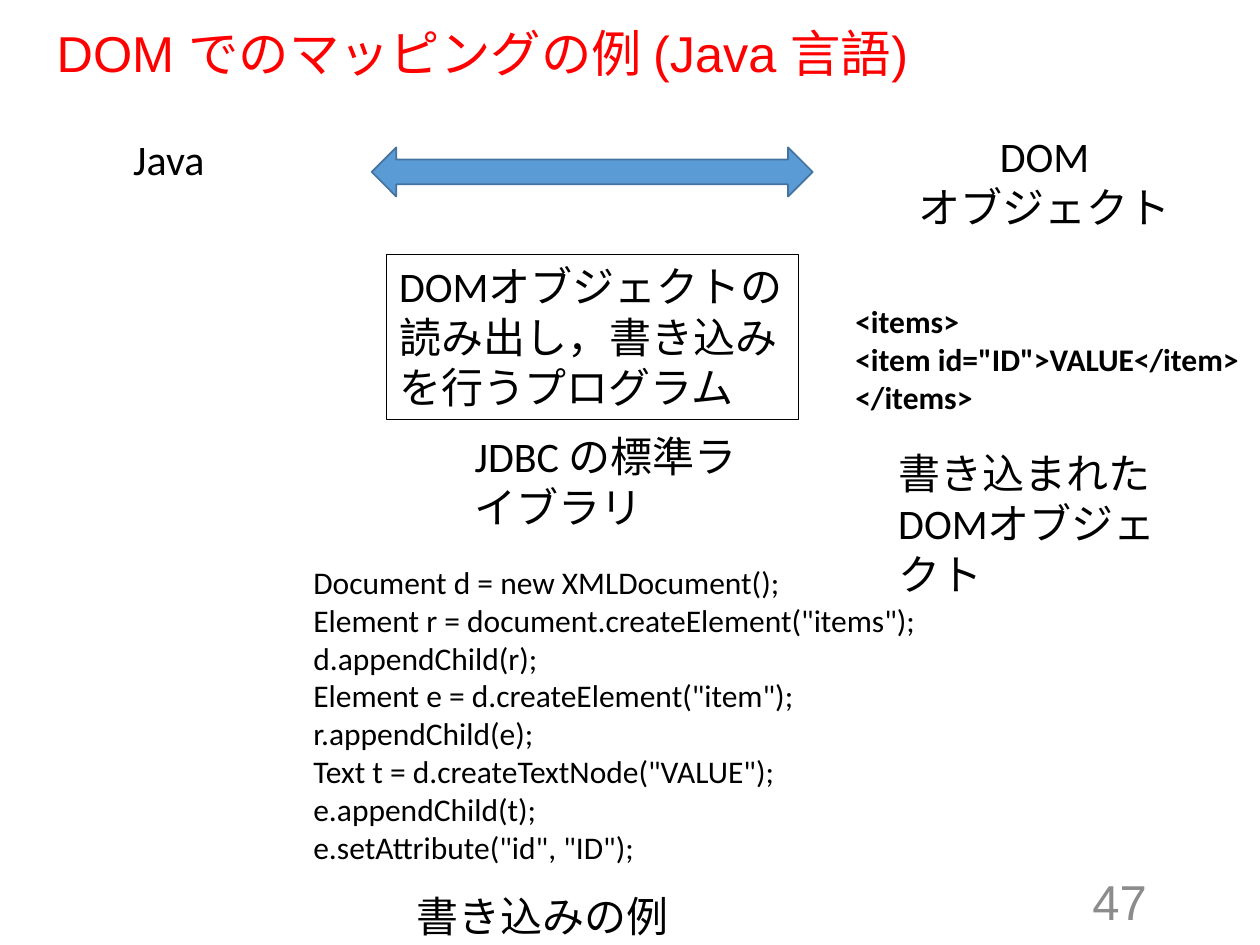
"""Build the slide on mapping between Java and DOM objects."""
from dataclasses import dataclass

from pptx import Presentation
from pptx.dml.color import RGBColor
from pptx.enum.shapes import MSO_SHAPE as Shape
from pptx.enum.text import MSO_ANCHOR as Anchor, MSO_AUTO_SIZE as AutoSize, PP_ALIGN as Align
from pptx.util import Pt


@dataclass(frozen=True)
class Label:
    """A text box: its place in points, its lines and its format."""
    left: float
    top: float
    width: float
    height: float
    lines: tuple[str, ...]
    size: float = 24
    bold: bool = False
    align: Align = Align.LEFT
    anchor: Anchor = Anchor.TOP
    font: str = "Calibri"
    color: str = "000000"
    border: str | None = None


CODE = (
    "Document d = new XMLDocument();",
    'Element r = document.createElement("items");',
    "d.appendChild(r);",
    'Element e = d.createElement("item");',
    "r.appendChild(e);",
    'Text t = d.createTextNode("VALUE");',
    "e.appendChild(t);",
    'e.setAttribute("id", "ID");',
)
MARKUP = ("<items>", '<item id="ID">VALUE</item>', "</items>")

LABELS = (
    Label(500.4, 500.4, 162, 28.8, ("47",), size=28, align=Align.RIGHT,
          anchor=Anchor.MIDDLE, font="Arial", color="8C8C8C"),
    Label(264.2, 242.6, 175, 65.5, ("JDBC の標準ライブラリ",)),
    Label(221, 145.4, 235.4, 94.3,
          ("DOMオブジェクトの読み出し，書き込みを行うプログラム",), border="000000"),
    Label(5.8, 72.7, 181.4, 36, ("Java",), align=Align.CENTER),
    Label(172, 318.2, 360, 181.4, CODE, size=18),
    Label(506.2, 71.3, 181.4, 65.5, ("DOM", "オブジェクト"), align=Align.CENTER),
    Label(481.7, 169.2, 241.9, 72.7, MARKUP, size=18, bold=True),
    Label(231.1, 505.4, 175, 36, ("書き込みの例",)),
    Label(506.2, 252, 175, 94.3, ("書き込まれたDOMオブジェクト",)),
)


def rgb(color: str) -> RGBColor:
    """Turn a hex string into a colour."""
    return RGBColor.from_string(color)


def write(shape, lines: tuple[str, ...], *, size: float, font: str, color: str,
          bold: bool = False, align: Align = Align.LEFT, anchor: Anchor = Anchor.TOP,
          spacing: float = 1.0) -> None:
    """Fill a shape with one formatted paragraph per line."""
    frame = shape.text_frame
    frame.word_wrap = True
    frame.auto_size = AutoSize.NONE
    frame.vertical_anchor = anchor
    frame.text = "\n".join(lines)
    for paragraph in frame.paragraphs:
        paragraph.alignment = align
        paragraph.line_spacing = spacing
        for run in paragraph.runs:
            run.font.size = Pt(size)
            run.font.name = font
            run.font.bold = bold
            run.font.color.rgb = rgb(color)


def add_title(slide, text: str) -> None:
    """Place and format the title placeholder."""
    title = slide.shapes.title
    title.left, title.top, title.width, title.height = Pt(25.2), Pt(13.7), Pt(666), Pt(36.7)
    write(title, (text,), size=28.8, font="Arial", color="FF0000",
          anchor=Anchor.MIDDLE, spacing=0.9)


def add_label(slide, label: Label) -> None:
    """Draw one label, with a border where it has one."""
    box = slide.shapes.add_textbox(
        Pt(label.left), Pt(label.top), Pt(label.width), Pt(label.height))
    if label.border:
        box.line.color.rgb = rgb(label.border)
        box.line.width = Pt(0.75)
    write(box, label.lines, size=label.size, font=label.font, color=label.color,
          bold=label.bold, align=label.align, anchor=label.anchor)


def add_mapping_arrow(slide) -> None:
    """Draw the double arrow between Java and the DOM object."""
    arrow = slide.shapes.add_shape(
        Shape.LEFT_RIGHT_ARROW, Pt(212.4), Pt(84.2), Pt(252), Pt(28.1))
    arrow.shadow.inherit = False
    arrow.fill.solid()
    arrow.fill.fore_color.rgb = rgb("5B9BD5")
    arrow.line.color.rgb = rgb("43739E")
    arrow.line.width = Pt(1)


def main() -> None:
    """Build and save the presentation."""
    presentation = Presentation()
    presentation.slide_width, presentation.slide_height = Pt(720), Pt(540)
    slide = presentation.slides.add_slide(presentation.slide_layouts.get_by_name("Title Only"))
    add_title(slide, "DOM でのマッピングの例 (Java 言語)")
    add_mapping_arrow(slide)
    for label in LABELS:
        add_label(slide, label)
    presentation.save("out.pptx")


if __name__ == "__main__":
    main()
